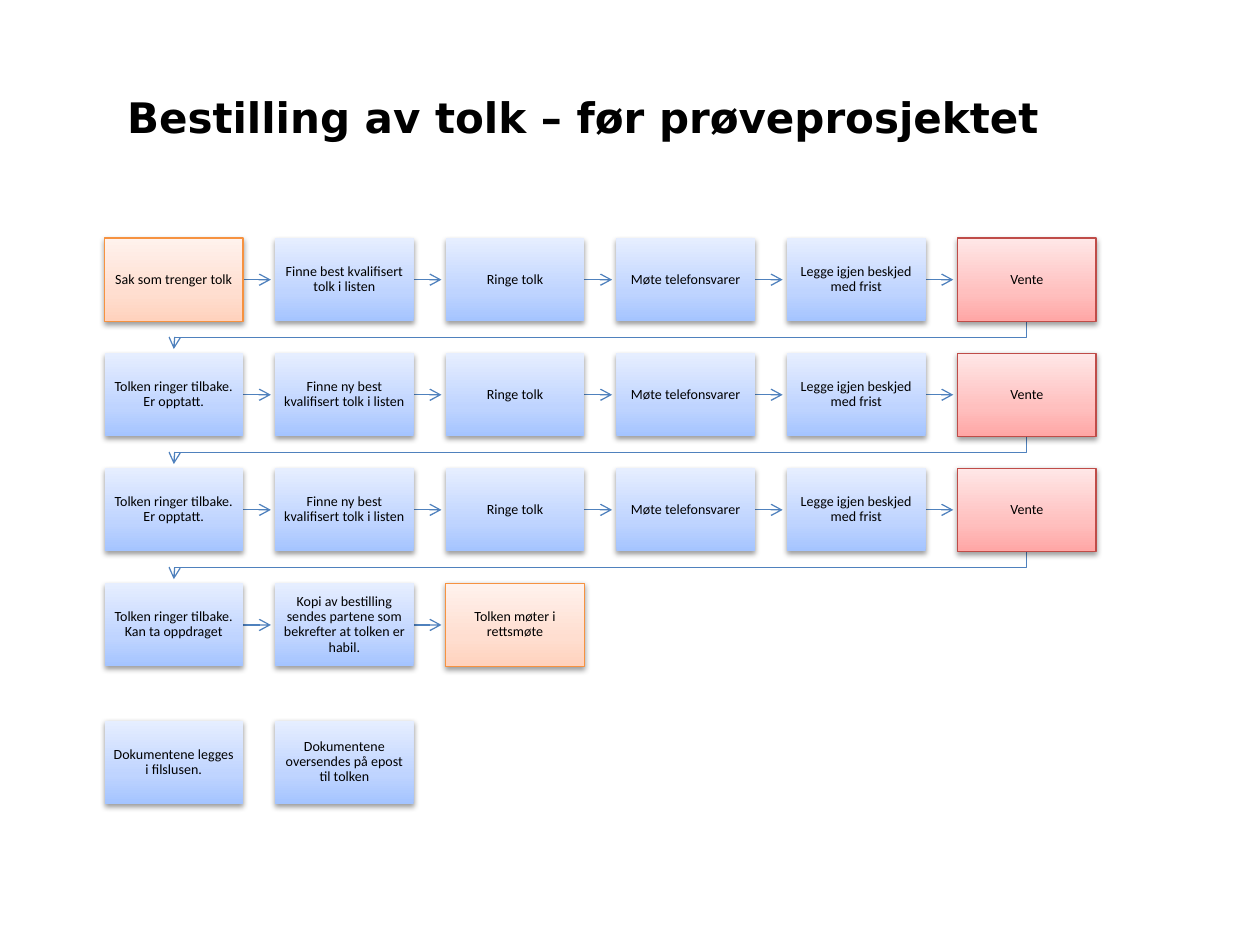
from lxml.etree import SubElement
from pptx import Presentation
from pptx.dml.color import RGBColor
from pptx.enum.shapes import MSO_CONNECTOR, MSO_SHAPE
from pptx.enum.text import MSO_ANCHOR, PP_ALIGN
from pptx.oxml import parse_xml
from pptx.oxml.ns import nsdecls, qn
from pptx.util import Inches, Pt

BLACK = RGBColor(0x00, 0x00, 0x00)
ARROW = RGBColor(0x4F, 0x81, 0xBD)
# Each style: gradient from bottom to top, then border colour
BLUE = ([RGBColor(0xA4, 0xC4, 0xFF), RGBColor(0xBF, 0xD4, 0xFF), RGBColor(0xE6, 0xEE, 0xFF)], None)
ORANGE = ([RGBColor(0xFF, 0xD2, 0xBD), RGBColor(0xFF, 0xDE, 0xD0), RGBColor(0xFF, 0xF2, 0xED)],
          RGBColor(0xF6, 0x92, 0x40))
RED = ([RGBColor(0xFF, 0xA6, 0xA5), RGBColor(0xFF, 0xC0, 0xBF), RGBColor(0xFF, 0xE7, 0xE7)],
       RGBColor(0xBF, 0x4C, 0x48))
STOPS = (0, 35, 100)

BOX_W, BOX_H = Inches(1.1), Inches(0.66)
COL_STEP, ROW_STEP = Inches(6.77 / 5), Inches(2.74 / 3)
ARROW_LEN = Inches(0.22)
TURN_DROP = Inches(0.13)

CALL = [("Ringe tolk", BLUE), ("Møte telefonsvarer", BLUE),
        ("Legge igjen beskjed med frist", BLUE), ("Vente", RED)]
RETRY = [("Tolken ringer tilbake. Er opptatt.", BLUE),
         ("Finne ny best kvalifisert tolk i listen", BLUE)] + CALL
BOOKING = [
    [("Sak som trenger tolk", ORANGE), ("Finne best kvalifisert tolk i listen", BLUE)] + CALL,
    RETRY,
    RETRY,
    [("Tolken ringer tilbake. Kan ta oppdraget", BLUE),
     ("Kopi av bestilling sendes partene som bekrefter at tolken er habil.", BLUE),
     ("Tolken møter i rettsmøte", ORANGE)],
]
DOCUMENTS = [("Dokumentene legges i filslusen.", BLUE),
             ("Dokumentene oversendes på epost til tolken", BLUE)]


def add_text(tf, text, font, size, bold=False):
    tf.word_wrap = True
    tf.vertical_anchor = MSO_ANCHOR.MIDDLE
    p = tf.paragraphs[0]
    r = p.add_run()
    r.text = text
    r.font.name, r.font.size, r.font.bold = font, Pt(size), bold
    r.font.color.rgb = BLACK
    return p


def add_title(slide, left, top, width, height):
    tf = slide.shapes.add_textbox(left, top, width, height).text_frame
    add_text(tf, "Bestilling av tolk – før prøveprosjektet", "DejaVu Sans", 24, True)


def add_step(slide, left, top, text, style):
    colors, border = style
    sp = slide.shapes.add_shape(MSO_SHAPE.RECTANGLE, left, top, BOX_W, BOX_H)
    stops = "".join(f'<a:gs pos="{pos * 1000}"><a:srgbClr val="{color}"/></a:gs>'
                    for pos, color in zip(STOPS, colors))
    spPr = sp._element.spPr
    spPr.append(parse_xml(f'<a:gradFill {nsdecls("a")} rotWithShape="1"><a:gsLst>{stops}</a:gsLst>'
                          '<a:lin ang="16200000" scaled="0"/></a:gradFill>'))
    if border:
        sp.line.color.rgb = border
        sp.line.width = Pt(0.75)
    else:
        sp.line.fill.background()
    spPr.append(parse_xml(f'<a:effectLst {nsdecls("a")}><a:outerShdw blurRad="40000" dist="20000" '
                          'dir="5400000" rotWithShape="0"><a:srgbClr val="000000">'
                          '<a:alpha val="38000"/></a:srgbClr></a:outerShdw></a:effectLst>'))
    tf = sp.text_frame
    tf.margin_left = tf.margin_right = tf.margin_top = tf.margin_bottom = Inches(0.06)
    p = add_text(tf, text, "Calibri", 8)
    p.alignment = PP_ALIGN.CENTER
    p.line_spacing = 0.9


def style_arrow(arrow):
    arrow.line.color.rgb = ARROW
    arrow.line.width = Pt(0.75)
    SubElement(arrow.line._get_or_add_ln(), qn("a:tailEnd"), type="arrow")
    SubElement(arrow._element.spPr, qn("a:effectLst"))


def add_next_arrow(slide, left, top):
    """Arrow to the right from the box at left, top."""
    x, y = left + BOX_W, top + BOX_H // 2
    style_arrow(slide.shapes.add_connector(MSO_CONNECTOR.STRAIGHT, x, y, x + ARROW_LEN, y))


def add_turn_arrow(slide, first_left, last_left, top):
    """Arrow from the last box of a row down to the first box of the next."""
    start, end = last_left + BOX_W // 2, first_left + BOX_W // 2
    bottom = top + BOX_H
    turn = bottom + TURN_DROP
    builder = slide.shapes.build_freeform(start, bottom)
    builder.add_line_segments([(start, turn), (end, turn), (end, bottom + ARROW_LEN)], close=False)
    sp = builder.convert_to_shape()
    sp.fill.background()
    style_arrow(sp)


def add_row(slide, left, top, steps, arrows=True):
    for i, (text, style) in enumerate(steps):
        x = left + i * COL_STEP
        if arrows and i < len(steps) - 1:
            add_next_arrow(slide, x, top)
        add_step(slide, x, top, text, style)


def add_flow(slide, left, top, rows):
    for i, steps in enumerate(rows):
        y = top + i * ROW_STEP
        if i < len(rows) - 1:
            add_turn_arrow(slide, left, left + (len(steps) - 1) * COL_STEP, y)
        add_row(slide, left, y, steps)


def main():
    prs = Presentation()
    prs.slide_width, prs.slide_height = Inches(10), Inches(7.5)
    s = prs.slides.add_slide(prs.slide_layouts[6])
    add_title(s, Inches(0.91), Inches(0.3), Inches(8.18), Inches(1.25))
    add_flow(s, Inches(0.83), Inches(1.89), BOOKING)
    add_row(s, Inches(0.83), Inches(5.72), DOCUMENTS, arrows=False)
    prs.save("out.pptx")


if __name__ == "__main__":
    main()
